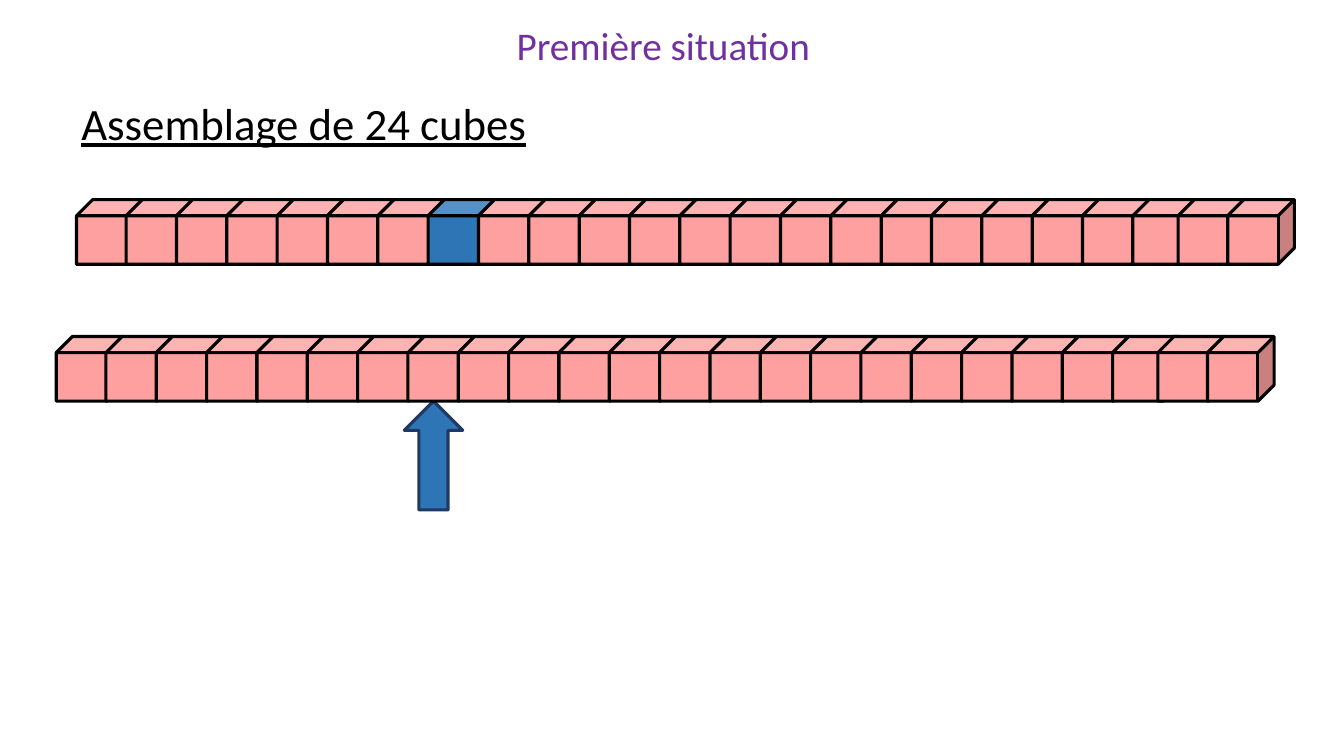
from pptx import Presentation
from pptx.dml.color import RGBColor
from pptx.enum.shapes import MSO_SHAPE as Preset
from pptx.enum.text import MSO_ANCHOR, MSO_AUTO_SIZE, PP_ALIGN
from pptx.util import Cm, Pt

COLORS = {
    "title": "7030A0",
    "black": "000000",
    "pink": "FEA0A0",
    "blue": "2E75B6",
    "navy": "203864",
}


def add_run(paragraph, text, size, color):
    run = paragraph.add_run()
    run.text = text
    run.font.name = "Calibri"
    run.font.size = Pt(size)
    run.font.color.rgb = RGBColor.from_string(COLORS[color])
    return run


def add_solid(shapes, preset, box, fill, line):
    """Add a filled, outlined preset shape; box is left, top, width, height in cm."""
    solid = shapes.add_shape(preset, *(Cm(length) for length in box))
    solid.shadow.inherit = False
    solid.fill.solid()
    solid.fill.fore_color.rgb = RGBColor.from_string(COLORS[fill])
    solid.line.color.rgb = RGBColor.from_string(COLORS[line])
    solid.line.width = Pt(2.25)


prs = Presentation()
prs.slide_width, prs.slide_height = Cm(33.87), Cm(19.05)
slide = prs.slides.add_slide(prs.slide_layouts[5])

# Title
title = slide.shapes.title
title.left, title.top, title.width, title.height = Cm(2.11), Cm(0.71), Cm(29.21), Cm(0.97)
title.text_frame.auto_size = MSO_AUTO_SIZE.NONE
title.text_frame.vertical_anchor = MSO_ANCHOR.MIDDLE
title_line = title.text_frame.paragraphs[0]
title_line.alignment = PP_ALIGN.CENTER
title_line.line_spacing = 0.9
add_run(title_line, "Première situation", 28, "title")

# Heading
heading = slide.shapes.add_textbox(Cm(1.8), Cm(2.29), Cm(19.25), Cm(1.63)).text_frame
heading.word_wrap = True
heading.auto_size = MSO_AUTO_SIZE.SHAPE_TO_FIT_TEXT
add_run(heading.paragraphs[0], "Assemblage de 24 cubes", 32, "black").font.underline = True

# Arrow under the eighth cube
add_solid(slide.shapes, Preset.UP_ARROW, (10.19, 10.11, 1.47, 2.74), "blue", "navy")

# Two rows of 24 cubes: 21 evenly spaced, one before them and two after
CUBE_WIDTH, CUBE_HEIGHT = 1.68, 1.63
cube_lefts = [1.93, *(3.18 + 25.37 * i / 20 for i in range(21)), 29.69, 30.94]

# Row shift, top and index of the blue cube
for shift, top, blue_cube in [(0, 5.03, 7), (-0.51, 8.48, None)]:
    row = slide.shapes.add_group_shape()
    for i, left in enumerate(cube_lefts):
        fill = "blue" if i == blue_cube else "pink"
        box = (left + shift, top, CUBE_WIDTH, CUBE_HEIGHT)
        add_solid(row.shapes, Preset.CUBE, box, fill, "black")

prs.save("out.pptx")
